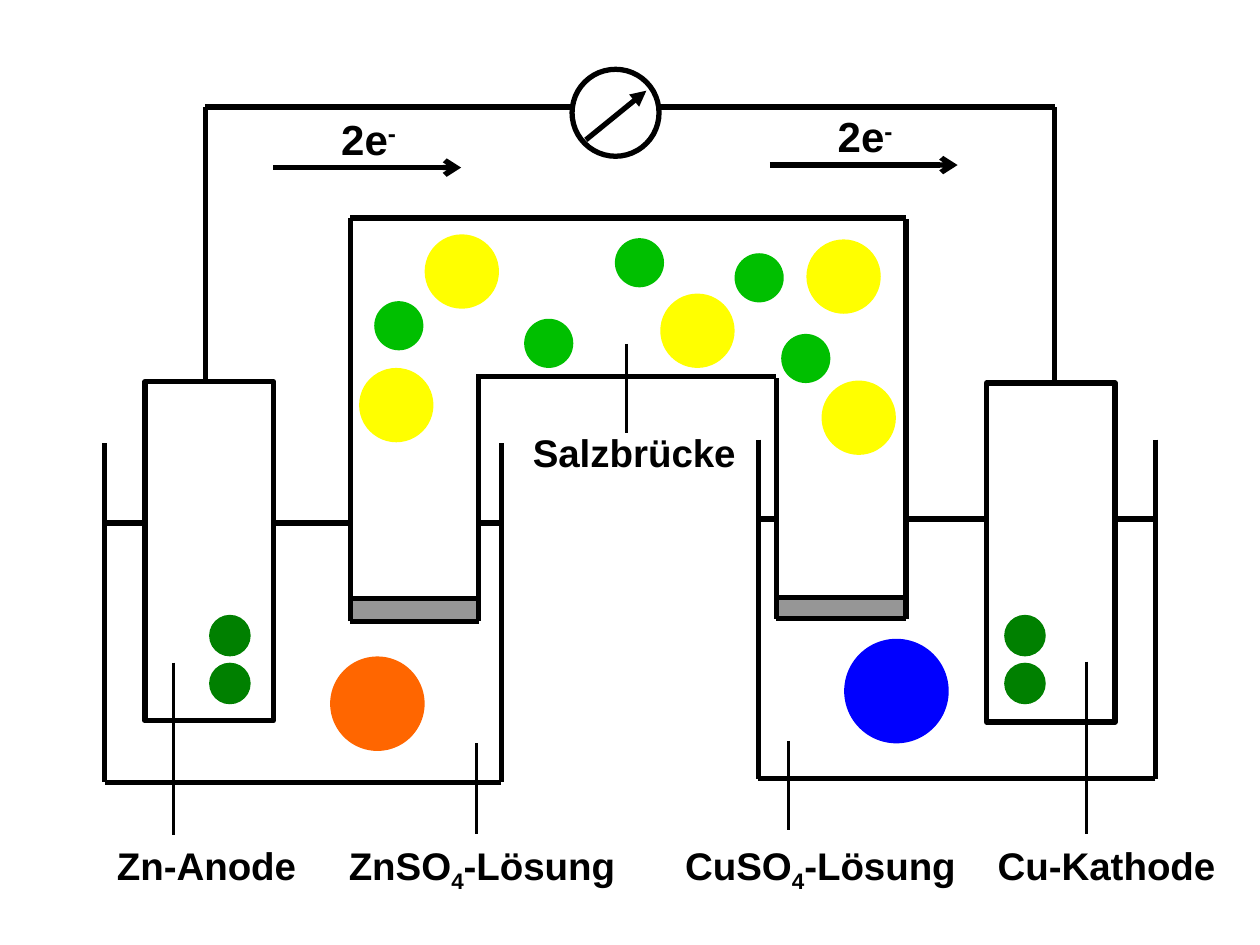
"""Build a slide showing a galvanic Zn/Cu cell with a salt bridge."""
import pptx
import pptx.dml.color
import pptx.enum.shapes
import pptx.enum.text
import pptx.oxml
import pptx.oxml.ns
import pptx.util

PX = 9144
SHAPE = pptx.enum.shapes.MSO_SHAPE


def rgb(value):
    """Turn a hex string into a colour."""
    return pptx.dml.color.RGBColor.from_string(value)


class Diagram:
    """Hold the style and the current slide, and draw its elements."""

    font = "Arial"
    ink = "000000"
    thick, thin = 3, 1.75

    def __init__(self, prs):
        """Add a blank slide."""
        self.slide = prs.slides.add_slide(prs.slide_layouts[6])

    def line(self, x1, y1, x2, y2, width=thick, arrow=None):
        """Draw a straight line, with an arrowhead at its end if asked."""
        ends = [v * PX for v in (x1, y1, x2, y2)]
        sp = self.slide.shapes.add_connector(
            pptx.enum.shapes.MSO_CONNECTOR.STRAIGHT, *ends)
        sp.line.color.rgb = rgb(self.ink)
        sp.line.width = pptx.util.Pt(width)
        pr = sp._element.spPr
        if arrow:
            tail = pptx.oxml.ns.qn("a:tailEnd")
            pr.find(pptx.oxml.ns.qn("a:ln")).makeelement(tail)
            head = pptx.oxml.parse_xml(
                f'<a:tailEnd {pptx.oxml.ns.nsdecls("a")} type="{arrow}"/>')
            pr.find(pptx.oxml.ns.qn("a:ln")).append(head)
        pr.append(pptx.oxml.parse_xml(
            f'<a:effectLst {pptx.oxml.ns.nsdecls("a")}/>'))

    def shape(self, kind, x, y, w, h, fill, outlined=False):
        """Draw a filled preset shape."""
        sp = self.slide.shapes.add_shape(kind, x * PX, y * PX, w * PX, h * PX)
        sp.shadow.inherit = False
        sp.fill.solid()
        sp.fill.fore_color.rgb = rgb(fill)
        if outlined:
            sp.line.color.rgb = rgb(self.ink)
            sp.line.width = pptx.util.Pt(self.thick)
        else:
            sp.line.fill.background()

    def rect(self, x, y, w, h, fill="FFFFFF", outlined=False):
        """Draw a rectangle."""
        self.shape(SHAPE.RECTANGLE, x, y, w, h, fill, outlined)

    def circle(self, x, y, d, fill="FFFFFF", outlined=False):
        """Draw a circle from its top left corner and diameter."""
        self.shape(SHAPE.OVAL, x, y, d, d, fill, outlined)

    def text(self, x, y, w, h, size, runs, tabs=()):
        """Write runs of (text, baseline in percent) in one paragraph."""
        sp = self.slide.shapes.add_textbox(x * PX, y * PX, w * PX, h * PX)
        tf = sp.text_frame
        tf.word_wrap = True
        tf.auto_size = pptx.enum.text.MSO_AUTO_SIZE.SHAPE_TO_FIT_TEXT
        p = tf.paragraphs[0]
        if tabs:
            stops = "".join(f'<a:tab pos="{t * PX}" algn="l"/>' for t in tabs)
            p._p.get_or_add_pPr().append(pptx.oxml.parse_xml(
                f'<a:tabLst {pptx.oxml.ns.nsdecls("a")}>{stops}</a:tabLst>'))
        p.font.name = self.font
        p.font.size = pptx.util.Pt(size)
        p.font.bold = True
        p.font.color.rgb = rgb(self.ink)
        for content, baseline in runs:
            r = p.add_run()
            r.text = content
            if baseline:
                r.font._element.set("baseline", str(baseline * 1000))


def half_cell(s, outer, inner, top, bottom, level, electrode, y, wire):
    """Draw a beaker with its solution level, electrode and wire."""
    for x in (outer, inner):
        s.line(x, top, x, bottom)
    s.line(outer, bottom, inner, bottom)
    s.line(outer, level, inner, level)
    s.rect(electrode, y, 102, 269, outlined=True)
    s.line(wire, 303, wire, 85)


def bridge_leg(s, left, right, outer, inner, top, frit, bottom):
    """Draw one leg of the salt bridge with its frit."""
    s.rect(left, top, right - left, bottom - top)
    s.rect(left, frit, right - left, bottom - frit, "969696")
    for y in (frit, bottom):
        s.line(left, y, right, y)
    s.line(outer, bottom, outer, top)
    s.line(inner, bottom, inner, 300)


def main():
    """Build and save the slide."""
    prs = pptx.Presentation()
    prs.slide_width, prs.slide_height = 1000 * PX, 750 * PX
    s = Diagram(prs)

    s.line(163, 85, 837, 85)
    half_cell(s, 83, 398, 352, 621, 415, 115, 303, 163)
    half_cell(s, 917, 602, 349, 618, 412, 783, 304, 837)
    s.circle(454, 55, 69, outlined=True)
    s.line(465, 111, 513, 72, arrow="triangle")

    for x, y in ((217, 133), (611, 131)):
        s.line(x, y, x + 149, y, arrow="arrow")
        s.text(x + 44, y - 48, 105, 50, 24, [("2e", 0), ("-", 30)])

    bridge_leg(s, 278, 380, 278, 380, 173, 475, 493)
    bridge_leg(s, 616, 719, 719, 616, 174, 474, 491)
    s.line(278, 173, 719, 173)
    s.line(378, 299, 616, 299)

    particles = (
        ("008000", 33, ((166, 488), (166, 526), (797, 488), (797, 526))),
        ("FF6600", 75, ((262, 521),)),
        ("0000FF", 83, ((670, 507),)),
        ("FFFF00", 59, ((285, 292), (652, 302), (337, 186), (524, 233),
                        (640, 190))),
        ("00BF00", 39, ((620, 265), (583, 201), (488, 189), (416, 253),
                        (297, 239))),
    )
    for fill, d, spots in particles:
        for x, y in spots:
            s.circle(x, y, d, fill)

    s.text(83, 663, 917, 47, 22,
           [("Zn-Anode\tZnSO", 0), ("4", -25), ("-Lösung\tCuSO", 0),
            ("4", -25), ("-Lösung\tCu-Kathode", 0)], tabs=(184, 451, 699))
    s.text(413, 336, 189, 47, 22, [("Salzbrücke", 0)])
    for x, y1, y2 in ((138, 526, 663), (862, 525, 662), (378, 590, 662),
                      (626, 588, 659), (497, 273, 344)):
        s.line(x, y1, x, y2, s.thin)

    prs.save("out.pptx")


if __name__ == "__main__":
    main()
